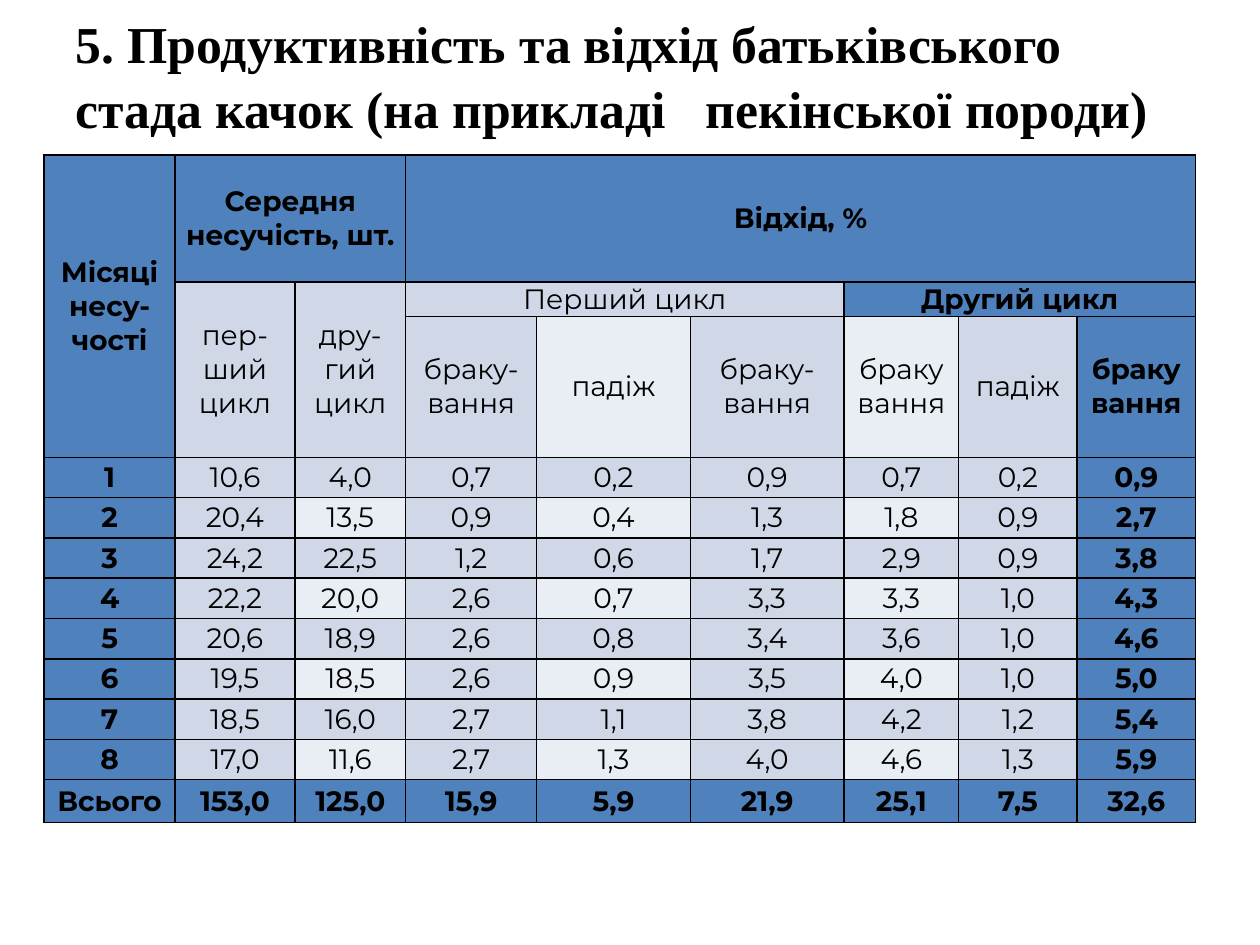
from dataclasses import dataclass

from lxml.etree import SubElement
from pptx import Presentation
from pptx.dml.color import RGBColor
from pptx.enum.text import MSO_ANCHOR, MSO_AUTO_SIZE, PP_ALIGN
from pptx.oxml.ns import qn
from pptx.util import Inches, Pt


@dataclass(frozen=True)
class Theme:
    ink: RGBColor = RGBColor.from_string("000000")
    accent: RGBColor = RGBColor.from_string("4F81BD")
    band: RGBColor = RGBColor.from_string("D0D8E8")
    light: RGBColor = RGBColor.from_string("E9EDF4")
    title_font: str = "Times New Roman"
    table_font: str = "Montserrat"
    title_size: float = 29.6
    table_size: float = 16
    border: float = 1


theme = Theme()


def add_run(paragraph, text, font_name, size, bold):
    run = paragraph.add_run()
    run.text = text
    run.font.name = font_name
    run.font.size = Pt(size)
    run.font.bold = bold
    run.font.color.rgb = theme.ink


def add_borders(cell):
    properties = cell._tc.get_or_add_tcPr()
    for side in ("lnL", "lnR", "lnT", "lnB"):
        line = SubElement(properties, qn(f"a:{side}"), w=str(Pt(theme.border)))
        fill = SubElement(line, qn("a:solidFill"))
        SubElement(fill, qn("a:srgbClr"), val=str(theme.ink))


presentation = Presentation()
presentation.slide_width, presentation.slide_height = Inches(10), Inches(7.5)
slide = presentation.slides.add_slide(presentation.slide_layouts[5])

# Title
title = slide.shapes.title
title.left, title.top = int(presentation.slide_width * 0.05), Inches(0.02)
title.width, title.height = int(presentation.slide_width * 0.9), Inches(1.06)
title_frame = title.text_frame
title_frame.word_wrap = True
title_frame.auto_size = MSO_AUTO_SIZE.NONE
title_frame.vertical_anchor = MSO_ANCHOR.TOP
paragraph = title_frame.paragraphs[0]
paragraph.alignment = PP_ALIGN.LEFT
paragraph.line_spacing = 1.05
paragraph.space_before = Pt(3)
add_run(paragraph, "5. Продуктивність та відхід батьківського стада качок (на прикладі \tпекінської породи)",
        theme.title_font, theme.title_size, True)

# Table content: empty strings are covered by merged cells
header = [
    ["Місяці несу-\nчості", "Середня несучість, шт.", "", "Відхід, %", "", "", "", "", ""],
    ["", "пер-ший\nцикл", "дру-гий цикл", "Перший цикл", "", "", "Другий цикл", "", ""],
    ["", "", "", "браку-вання", "падіж", "браку-вання", "бракування", "падіж", "бракування"],
]
months = """
1 10,6 4,0 0,7 0,2 0,9 0,7 0,2 0,9
2 20,4 13,5 0,9 0,4 1,3 1,8 0,9 2,7
3 24,2 22,5 1,2 0,6 1,7 2,9 0,9 3,8
4 22,2 20,0 2,6 0,7 3,3 3,3 1,0 4,3
5 20,6 18,9 2,6 0,8 3,4 3,6 1,0 4,6
6 19,5 18,5 2,6 0,9 3,5 4,0 1,0 5,0
7 18,5 16,0 2,7 1,1 3,8 4,2 1,2 5,4
8 17,0 11,6 2,7 1,3 4,0 4,6 1,3 5,9
Всього 153,0 125,0 15,9 5,9 21,9 25,1 7,5 32,6
"""
rows = header + [line.split() for line in months.strip().splitlines()]
column_widths = [1.04, 0.95, 0.88, 1.04, 1.22, 1.22, 0.91, 0.94, 0.94]
row_heights = [1.01, 0.18, 1.12] + [0.32] * 8 + [0.34]
last_row, last_column = len(rows) - 1, len(column_widths) - 1

# Table grid
table = slide.shapes.add_table(
    len(rows), len(column_widths), Inches(0.35), Inches(1.23),
    Inches(sum(column_widths)), Inches(sum(row_heights))).table
for column, width in zip(table.columns, column_widths):
    column.width = Inches(width)
for row, height in zip(table.rows, row_heights):
    row.height = Inches(height)

# Merged header cells: first and last (row, column)
merges = [((0, 0), (2, 0)), ((0, 1), (0, 2)), ((0, 3), (0, 8)), ((1, 1), (2, 1)),
          ((1, 2), (2, 2)), ((1, 3), (1, 5)), ((1, 6), (1, 8))]
for first, last in merges:
    table.cell(*first).merge(table.cell(*last))

# Cells: the outer columns, top and total rows and second-cycle heading stand out
for row_index, row in enumerate(rows):
    for column_index, text in enumerate(row):
        cell = table.cell(row_index, column_index)
        add_borders(cell)
        strong = (row_index in (0, last_row) or column_index in (0, last_column)
                  or (row_index, column_index) == (1, 6))
        pale = row_index % 2 == 0 and column_index % 2 == 0
        cell.fill.solid()
        cell.fill.fore_color.rgb = theme.accent if strong else theme.light if pale else theme.band
        cell.vertical_anchor = MSO_ANCHOR.MIDDLE
        cell.margin_left = cell.margin_right = Inches(0.07)
        cell.margin_top = cell.margin_bottom = 0
        if cell.is_spanned:
            continue
        for line_index, line in enumerate(text.split("\n")):
            frame = cell.text_frame
            paragraph = frame.add_paragraph() if line_index else frame.paragraphs[0]
            paragraph.alignment = PP_ALIGN.CENTER
            add_run(paragraph, line, theme.table_font, theme.table_size, strong)

presentation.save("out.pptx")
